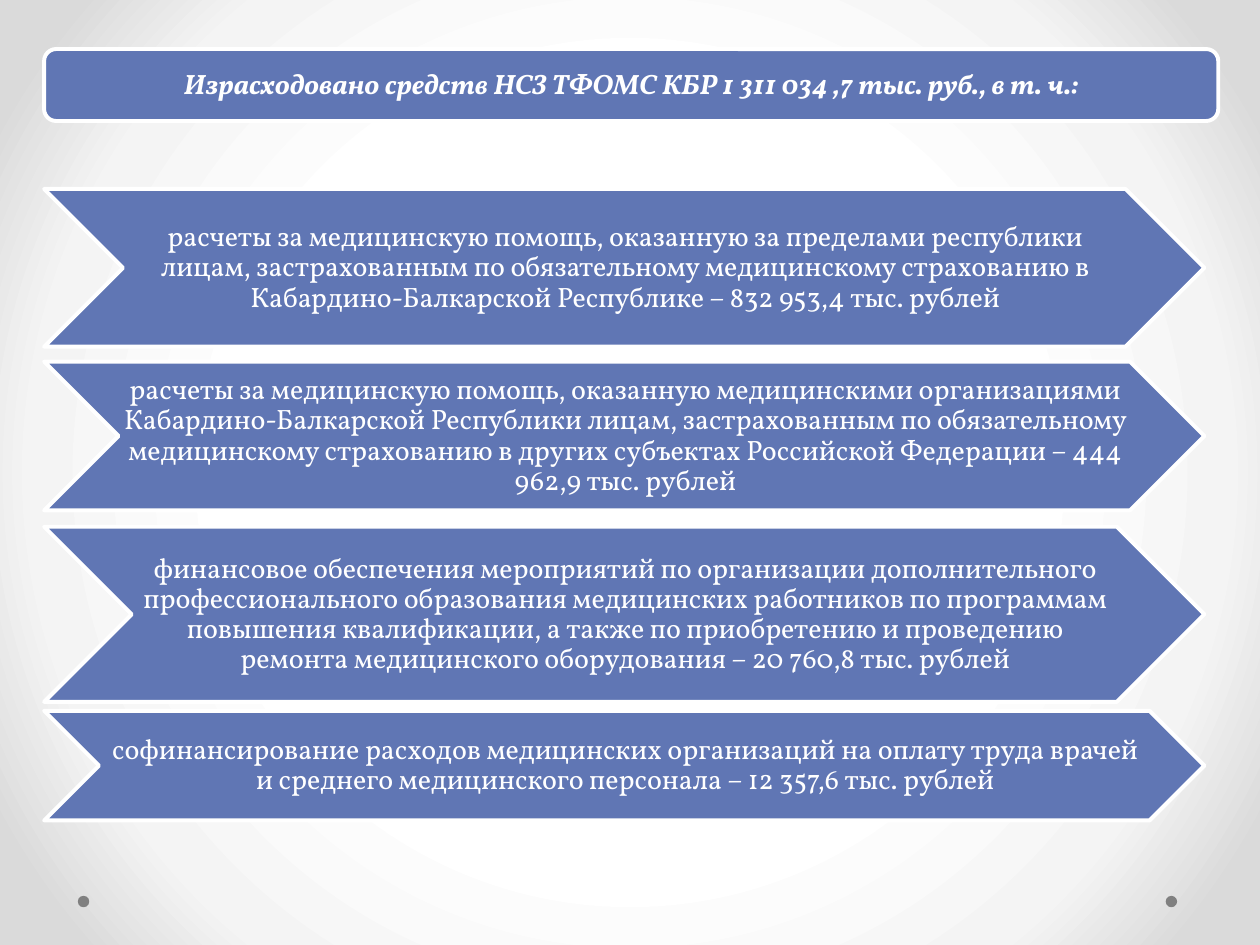
from lxml.etree import SubElement
from pptx import Presentation
from pptx.dml.color import RGBColor
from pptx.enum.shapes import MSO_SHAPE
from pptx.enum.text import MSO_ANCHOR, MSO_AUTO_SIZE, PP_ALIGN
from pptx.oxml.ns import qn
from pptx.util import Cm, Pt

HEADING = "Израсходовано средств НСЗ ТФОМС КБР 1 311 034 ,7 тыс. руб., в т. ч.:"

# top, height, text
EXPENSES = [
    (3.81, 3.18, "расчеты за медицинскую помощь, оказанную за пределами республики лицам, "
     "застрахованным по обязательному медицинскому страхованию в "
     "Кабардино-Балкарской Республике – 832 953,4 тыс. рублей"),
    (7.29, 3.0, "расчеты за медицинскую помощь, оказанную медицинскими организациями "
     "Кабардино-Балкарской Республики лицам, застрахованным по обязательному "
     "медицинскому страхованию в других субъектах Российской Федерации – "
     "444 962,9 тыс. рублей"),
    (10.62, 3.53, "финансовое обеспечения мероприятий по организации дополнительного "
     "профессионального образования медицинских работников по программам повышения "
     "квалификации, а также по приобретению и проведению ремонта медицинского "
     "оборудования – 20 760,8 тыс. рублей"),
    (14.33, 2.21, "софинансирование расходов медицинских организаций на оплату труда врачей "
     "и среднего медицинского персонала – 12 357,6 тыс. рублей"),
]

THEME = {
    "font": "Vollkorn",
    "size": Pt(16),
    "text": RGBColor.from_string("FFFFFF"),
    "fill": RGBColor.from_string("6076B4"),
    "line": RGBColor.from_string("FFFFFF"),
    "line_width": Pt(2.25),
    "dot": RGBColor.from_string("808080"),
    "background": [(50, "FFFFFF"), (76, "F4F4F4"), (92, "DADADA")],
}

LEFT = 0.89
BANNER = (LEFT, 0.99, 23.67, 1.45)
BANNER_INSET = 0.08
CHEVRON_WIDTH = 23.39
DOT_LEFTS = (1.57, 23.5)
DOT_TOP, DOT_SIZE = 18.06, 0.23


def set_background(s):
    fill = s.background.fill
    fill.gradient()
    grad = s.background._cSld.find(".//" + qn("a:gradFill"))
    for child in list(grad):
        grad.remove(child)
    stops = SubElement(grad, qn("a:gsLst"))
    for position, color in THEME["background"]:
        gs = SubElement(stops, qn("a:gs"), pos=str(position * 1000))
        SubElement(gs, qn("a:srgbClr"), val=color)
    focus = SubElement(grad, qn("a:path"), path="circle")
    SubElement(focus, qn("a:fillToRect"), l="50000", t="50000", r="50000", b="50000")


def add_block(s, kind, box, color, outlined=True):
    sp = s.shapes.add_shape(kind, *map(Cm, box))
    sp.shadow.inherit = False
    sp.fill.solid()
    sp.fill.fore_color.rgb = color
    if outlined:
        sp.line.color.rgb = THEME["line"]
        sp.line.width = THEME["line_width"]
    else:
        sp.line.fill.background()
    return sp


def write(sp, text, insets, emphasis=None):
    tf = sp.text_frame
    tf.word_wrap = True
    tf.auto_size = MSO_AUTO_SIZE.NONE
    tf.vertical_anchor = MSO_ANCHOR.MIDDLE
    tf.margin_left, tf.margin_top, tf.margin_right, tf.margin_bottom = map(Cm, insets)
    p = tf.paragraphs[0]
    p.alignment = PP_ALIGN.CENTER
    p.line_spacing = 0.9
    r = p.add_run()
    r.text = text
    r.font.name = THEME["font"]
    r.font.size = THEME["size"]
    r.font.color.rgb = THEME["text"]
    r.font.bold = r.font.italic = emphasis


def add_heading(s):
    add_block(s, MSO_SHAPE.ROUNDED_RECTANGLE, BANNER, THEME["fill"])
    title = s.shapes.title
    left, top, width, height = BANNER
    title.left, title.top = Cm(left + BANNER_INSET), Cm(top + BANNER_INSET)
    title.width, title.height = Cm(width - 2 * BANNER_INSET), Cm(height - 2 * BANNER_INSET)
    s.shapes._spTree.append(title._element)
    write(title, HEADING, (0.18, 0.18, 0.18, 0.18), emphasis=True)


def main():
    prs = Presentation()
    prs.slide_width, prs.slide_height = Cm(25.4), Cm(19.05)
    s = prs.slides.add_slide(prs.slide_layouts.get_by_name("Title Only"))
    set_background(s)
    for left in DOT_LEFTS:
        add_block(s, MSO_SHAPE.OVAL, (left, DOT_TOP, DOT_SIZE, DOT_SIZE),
                  THEME["dot"], outlined=False)
    for top, height, text in EXPENSES:
        sp = add_block(s, MSO_SHAPE.CHEVRON, (LEFT, top, CHEVRON_WIDTH, height), THEME["fill"])
        write(sp, text, (0.05, 0.03, 0, 0.03))
    add_heading(s)
    prs.save("out.pptx")


if __name__ == "__main__":
    main()
